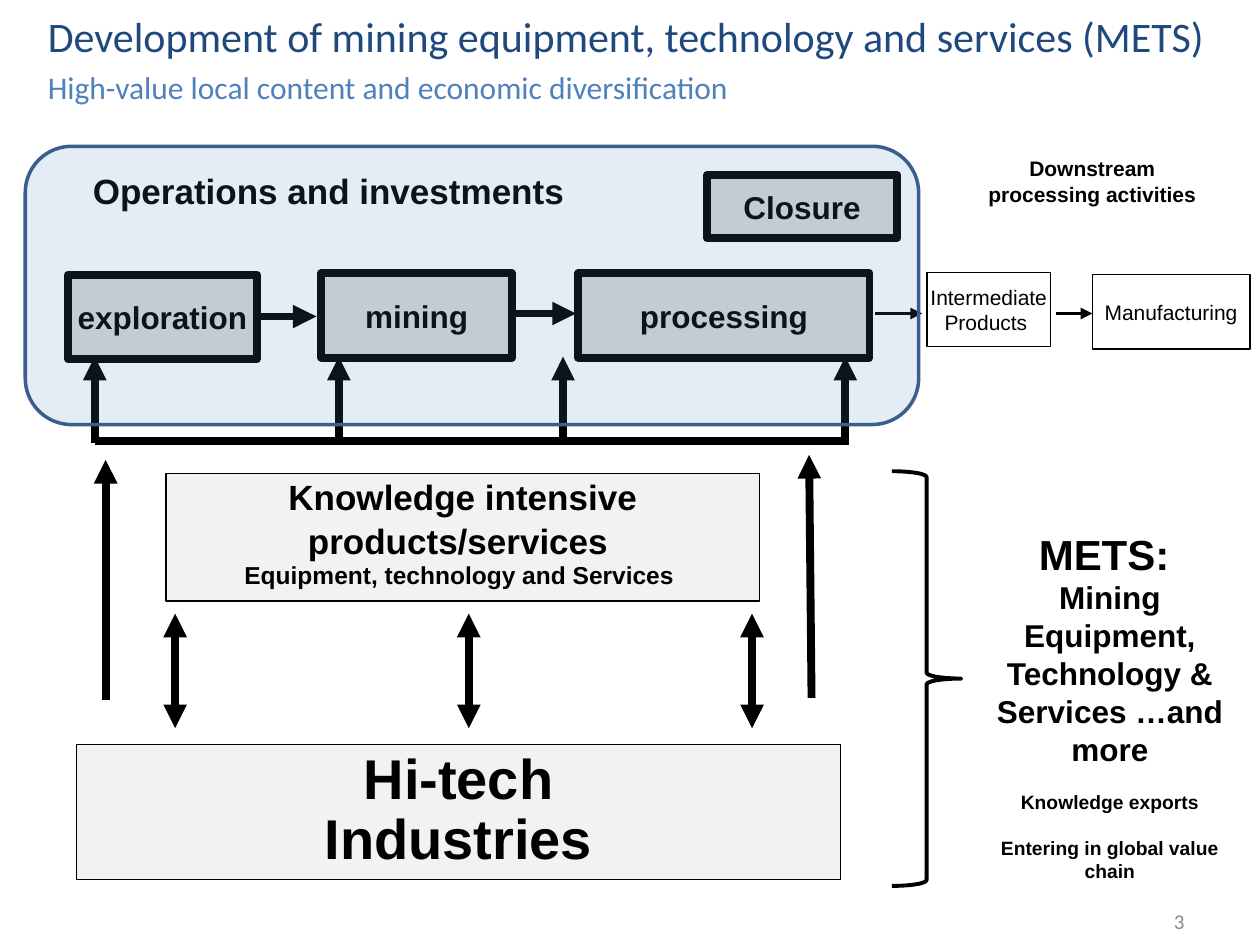
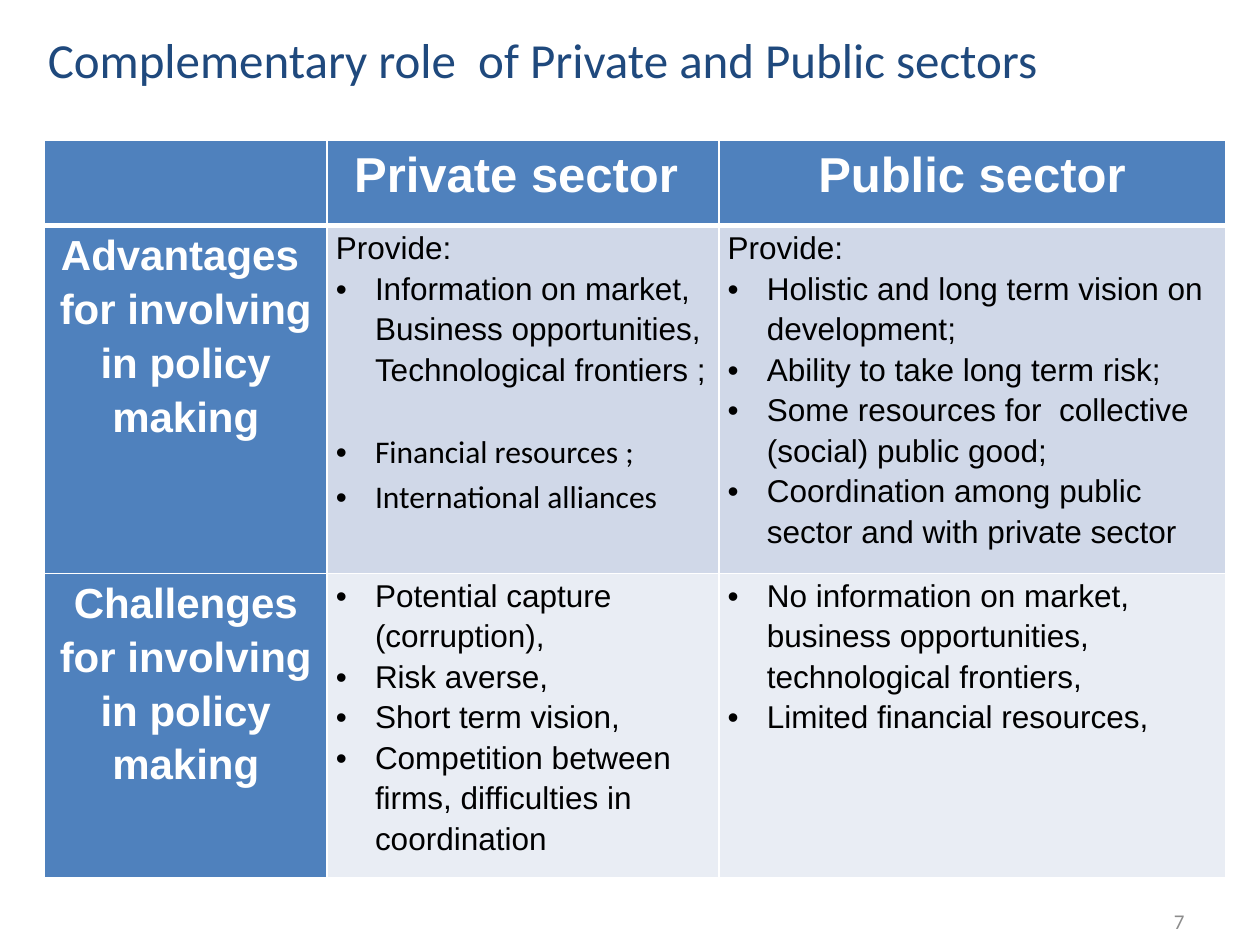
from pptx import Presentation
from pptx.dml.color import RGBColor
from pptx.enum.shapes import MSO_CONNECTOR, MSO_SHAPE
from pptx.enum.text import MSO_ANCHOR, MSO_AUTO_SIZE, PP_ALIGN
from pptx.oxml.ns import qn
from pptx.util import Cm, Pt
from lxml.etree import SubElement

NAVY, BLUE, STEEL = "1F497D", "4F81BD", "3A5F8C"
BLACK, WHITE, GREY = "000000", "FFFFFF", "8C8C8C"
STAGE_FILL, INDUSTRY_FILL = "D9D9D9", "F2F2F2"
ROW_FILLS = ("D0D8E8", "E9EDF4")
TITLE_BOX = (0.71, 0, 24, 2.39)
NUMBER_BOX = (18.21, 18.06, 5.92, 1.02)


def rgb(value):
    return RGBColor.from_string(value)


def at(box, dx, dy, w, h):
    """Lengths of a part placed at an offset from the corner of a box."""
    return Cm(box[0] + dx), Cm(box[1] + dy), Cm(w), Cm(h)


def style(p, size, color=BLACK, bold=False, font="Arial", align=PP_ALIGN.CENTER, spacing=None):
    p.alignment = align
    p.line_spacing = spacing
    for r in p.runs:
        r.font.size, r.font.bold, r.font.name = Pt(size), bold, font
        r.font.color.rgb = rgb(color)


def write(tf, lines, sizes, **look):
    """Write one paragraph per line, each with its own size."""
    tf.text = "\n".join(lines)
    for p, size in zip(tf.paragraphs, sizes):
        style(p, size, **look)


def add_label(s, place, lines, sizes, anchor=MSO_ANCHOR.TOP, **look):
    tf = s.shapes.add_textbox(*place).text_frame
    tf.word_wrap, tf.vertical_anchor = True, anchor
    write(tf, lines, sizes, **look)
    return tf


def add_outline(s, kind, place, line, width, fill=None):
    sp = s.shapes.add_shape(kind, *place)
    sp.shadow.inherit = False
    sp.line.color.rgb, sp.line.width = rgb(line), Pt(width)
    if fill:
        sp.fill.solid()
        sp.fill.fore_color.rgb = rgb(fill)
    else:
        sp.fill.background()
    return sp


def add_block(s, place, lines, sizes, fill, width=0.75, wrap=False,
              anchor=MSO_ANCHOR.MIDDLE, **look):
    tf = add_outline(s, MSO_SHAPE.RECTANGLE, place, BLACK, width, fill).text_frame
    tf.word_wrap, tf.vertical_anchor = wrap, anchor
    write(tf, lines, sizes, **look)
    return tf


def add_arrow(s, box, start, end, width=4.5, ends=("tailEnd",)):
    points = [Cm(box[i] + point[i]) for point in (start, end) for i in (0, 1)]
    line = s.shapes.add_connector(MSO_CONNECTOR.STRAIGHT, *points)
    line.line.color.rgb, line.line.width = rgb(BLACK), Pt(width)
    for end_tag in ends:
        SubElement(line.line._get_or_add_ln(), qn(f"a:{end_tag}"), type="triangle")
    SubElement(line._element.spPr, qn("a:effectLst"))


def new_slide(prs, number, lines, sizes, anchor, spacing=None):
    s = prs.slides.add_slide(prs.slide_layouts[5])
    title = s.shapes.title
    title.left, title.top, title.width, title.height = at(TITLE_BOX, 0, 0, *TITLE_BOX[2:])
    tf = title.text_frame
    tf.auto_size, tf.word_wrap, tf.vertical_anchor = MSO_AUTO_SIZE.NONE, True, anchor
    write(tf, lines, sizes, color=NAVY, font="Calibri", align=PP_ALIGN.LEFT, spacing=spacing)
    add_label(s, at(NUMBER_BOX, 0, 0, *NUMBER_BOX[2:]), [str(number)], [12], MSO_ANCHOR.MIDDLE,
              color=GREY, font="Calibri", align=PP_ALIGN.RIGHT)
    return s


def draw_operations(s, box):
    stages = [("exploration", 0.86, 2.59, 3.81, 1.7), ("mining", 5.97, 2.56, 3.84, 1.7),
              ("processing", 11.15, 2.56, 5.87, 1.7), ("Closure", 13.74, 0.58, 3.84, 1.27)]
    for name, *place in stages:
        add_block(s, at(box, *place), [name], [18], STAGE_FILL, 4.5, bold=True)
    for x, y in ((4.65, 3.43), (9.88, 3.37)):
        add_arrow(s, box, (x, y), (x + 1.22, y))
    for x in (1.4, 6.32, 10.84, 16.53):
        add_arrow(s, box, (x, 5.99), (x, 4.24))
    add_arrow(s, box, (1.4, 5.94), (16.61, 5.94), ends=())
    add_label(s, at(box, 1.06, 0.35, 10.11, 1.12), ["Operations and investments "], [20], bold=True)
    frame = add_outline(s, MSO_SHAPE.ROUNDED_RECTANGLE, at(box, 0, 0, *box[2:]), STEEL, 2, BLUE)
    tint = frame._element.spPr.find(qn("a:solidFill"))[0]
    SubElement(tint, qn("a:alpha"), val="15000")


def draw_downstream(s, box):
    add_label(s, at(box, 2, 0, 4.78, 1.27), ["Downstream processing activities"], [12], bold=True)
    add_block(s, at(box, 1.06, 2.47, 2.49, 1.5), ["Intermediate", "Products "], [12, 12], WHITE)
    add_block(s, at(box, 4.39, 2.52, 3.18, 1.5), ["Manufacturing"], [12], WHITE)
    for start, end in ((0, 0.96), (3.66, 4.39)):
        add_arrow(s, box, (start, 3.3), (end, 3.3), 2.25)


def draw_suppliers(s, box):
    look = dict(fill=INDUSTRY_FILL, wrap=True, anchor=MSO_ANCHOR.TOP, bold=True, spacing=0.9)
    tf = add_block(s, at(box, 1.8, 0.38, 11.96, 2.57),
                   ["Knowledge intensive products/services", "Equipment, technology and Services "],
                   [20, 14], **look)
    r = tf.paragraphs[0].add_run()
    r.text, r.font.size = " ", Pt(24)
    add_block(s, at(box, 0, 5.84, box[2], 2.72), ["Hi-tech", "Industries"], [32, 32], **look)
    for x in (1.98, 7.9, 13.61):
        add_arrow(s, box, (x, 3.2), (x, 5.51), ends=("headEnd", "tailEnd"))
    add_arrow(s, box, (0.58, 4.95), (0.58, 0.1))
    add_arrow(s, box, (14.81, 4.9), (14.76, 0))


def draw_mets(s, box):
    add_outline(s, MSO_SHAPE.RIGHT_BRACE, at(box, 0, 0, 1.4, box[3]), BLACK, 2.25)
    tf = add_label(s, at(box, 1.4, 1.02, 5.99, 7.01),
                   ["METS: ", "Mining Equipment, Technology & Services …and more",
                    "Knowledge exports", "Entering in global value chain"],
                   [24, 18, 11, 11], bold=True)
    for p in tf.paragraphs[2:]:
        p.space_before = Pt(13)


def set_bullet(p):
    pPr = p._p.get_or_add_pPr()
    pPr.set("marL", str(Cm(0.79)))
    pPr.set("indent", str(-Cm(0.79)))
    SubElement(pPr, qn("a:buFont"), typeface="Arial")
    SubElement(pPr, qn("a:buChar"), char="•")


def format_cell(cell, fill, bottom):
    cell.margin_left = cell.margin_right = Cm(0.18)
    cell.margin_top = cell.margin_bottom = 0
    tcPr = cell._tc.get_or_add_tcPr()
    for side, width in (("L", 1), ("R", 1), ("T", 1), ("B", bottom)):
        ln = SubElement(tcPr, qn(f"a:ln{side}"), w=str(Pt(width)))
        SubElement(SubElement(ln, qn("a:solidFill")), qn("a:srgbClr"), val=WHITE)
    cell.fill.solid()
    cell.fill.fore_color.rgb = rgb(fill)


def draw_sector_table(s, box, rows):
    table = s.shapes.add_table(3, 3, *at(box, 0, 0, *box[2:])).table
    for column, width in zip(table.columns, (5.69, 7.9, 10.21)):
        column.width = Cm(width)
    for row, height in zip(table.rows, (1.73, 6.12, 6.12)):
        row.height = Cm(height)
    for i, row in enumerate(rows):
        for j, content in enumerate(row):
            cell = table.cell(i, j)
            heading = i == 0 or j == 0
            format_cell(cell, BLUE if heading else ROW_FILLS[i - 1], 1 if i else 3)
            if heading:
                write(cell.text_frame, [content], [24 if i else 28],
                      color=WHITE, bold=True, spacing=1.15)
                continue
            write(cell.text_frame, content, [18] * len(content), align=PP_ALIGN.LEFT, spacing=1.15)
            for p in cell.text_frame.paragraphs:
                if p.text.startswith("Financial"):
                    p.space_before = Pt(23)
                if p.text.startswith(("Financial", "International")):
                    p.runs[0].font.name = "Calibri"
                if p.text != "Provide:":
                    set_bullet(p)


SECTOR_ROWS = [
    ["", "Private sector ", "Public sector"],
    ["Advantages  for involving in policy making",
     ["Provide:",
      "Information on market, Business opportunities, Technological frontiers ;",
      "Financial resources ;",
      "International alliances"],
     ["Provide:",
      "Holistic and long term vision on development;",
      "Ability to take long term risk;",
      "Some resources for  collective (social) public good;",
      "Coordination among public sector and with private sector"]],
    ["Challenges for involving in policy making",
     ["Potential capture (corruption),",
      "Risk averse,",
      "Short term vision,",
      "Competition between firms, difficulties in coordination"],
     ["No information on market, business opportunities, technological frontiers,",
      "Limited financial resources,"]],
]


def build_mets_slide(prs):
    s = new_slide(prs, 3, ["Development of mining equipment, technology and services (METS)",
                           "High-value local content and economic diversification"],
                  [24, 18], MSO_ANCHOR.BOTTOM, spacing=1.2)
    tf = s.shapes.title.text_frame
    tf.margin_bottom = Cm(0.25)
    tf.paragraphs[1].runs[0].font.color.rgb = rgb(BLUE)
    draw_downstream(s, (17.63, 3.02, 7.57, 4.02))
    draw_suppliers(s, (1.55, 9.17, 15.39, 8.56))
    draw_mets(s, (17.98, 9.5, 7.39, 8.36))
    draw_operations(s, (0.51, 2.95, 18.01, 5.61))


def build_sectors_slide(prs):
    s = new_slide(prs, 7, ["Complementary role  of Private and Public sectors"],
                  [28], MSO_ANCHOR.MIDDLE)
    draw_sector_table(s, (0.9, 2.82, 23.8, 13.97), SECTOR_ROWS)


def main():
    prs = Presentation()
    prs.slide_width, prs.slide_height = Cm(25.4), Cm(19.05)
    build_mets_slide(prs)
    build_sectors_slide(prs)
    prs.save("out.pptx")


if __name__ == "__main__":
    main()
